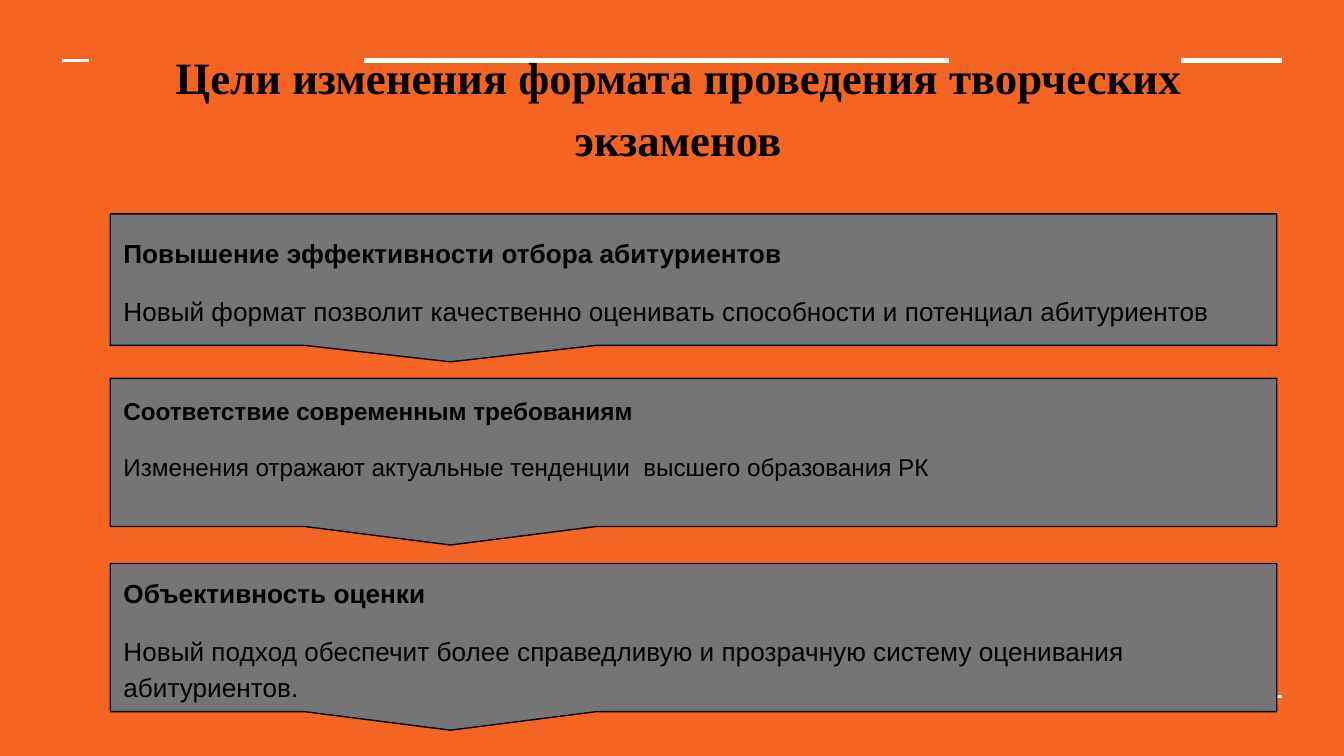
from lxml.etree import SubElement
from pptx import Presentation
from pptx.dml.color import RGBColor
from pptx.enum.shapes import MSO_CONNECTOR, MSO_SHAPE
from pptx.enum.text import MSO_ANCHOR, PP_ALIGN
from pptx.oxml.ns import qn
from pptx.util import Inches, Pt

ORANGE = RGBColor(0xF4, 0x65, 0x24)
WHITE = RGBColor(0xFF, 0xFF, 0xFF)
BLACK = RGBColor(0x00, 0x00, 0x00)
GREY = RGBColor(0x75, 0x75, 0x75)

SLIDE_WIDTH = Inches(10)
SLIDE_HEIGHT = SLIDE_WIDTH * 9 // 16
LEFT, CALLOUT_WIDTH = 8.2, 86.8
FIRST_TOP = 28.3
STEP = 1.25  # callout height plus the room for its tail
TAIL_TIP = (-5 / 24, 5 / 8)  # from the callout's centre, as shares of its size

# left, right, height on the slide (percent), width in points
RULES = [(27.1, 95.4, 8, 3), (27.1, 95.4, 92.1, 1.5), (4.65, 6.65, 8, 1.5)]

# heading, text, height (percent), font size, bottom inset in inches
GOALS = [
    ("Повышение эффективности отбора абитуриентов",
     "Новый формат позволит качественно оценивать способности и потенциал абитуриентов",
     17.4, 14, 0.1),
    ("Соответствие современным требованиям",
     "Изменения отражают актуальные тенденции  высшего образования РК",
     19.6, 13, 0.33),
    ("Объективность оценки",
     "Новый подход обеспечит более справедливую и прозрачную систему оценивания абитуриентов.",
     19.6, 14, 0.1),
]


def across(percent):
    return round(SLIDE_WIDTH * percent / 100)


def down(percent):
    return round(SLIDE_HEIGHT * percent / 100)


def set_frame(frame, anchor, bottom=0.1):
    frame.word_wrap = True
    frame.vertical_anchor = anchor
    frame.margin_left = frame.margin_right = frame.margin_top = Inches(0.1)
    frame.margin_bottom = Inches(bottom)


def set_paragraph(para, align, space_before):
    para.alignment = align
    para.line_spacing = 1.15
    para.space_before = Pt(space_before)


def add_span(para, text, font_name, size, bold):
    span = para.add_run()
    span.text = text
    span.font.name = font_name
    span.font.size = Pt(size)
    span.font.bold = bold
    span.font.color.rgb = BLACK
    return span


def highlight(span, color):
    """Put a text highlight right after the fill, where the schema wants it."""
    properties = span.font._element
    mark = SubElement(properties, qn("a:highlight"))
    SubElement(mark, qn("a:srgbClr")).set("val", str(color))
    properties.find(qn("a:solidFill")).addnext(mark)


def add_rule(slide, left, right, height, width):
    rule = slide.shapes.add_connector(
        MSO_CONNECTOR.STRAIGHT, across(left), down(height), across(right), down(height))
    rule.line.color.rgb = WHITE
    rule.line.width = Pt(width)
    SubElement(rule._element.spPr, qn("a:effectLst"))


def add_title(slide):
    box = slide.shapes.add_textbox(across(LEFT), down(3.7), across(84.5), down(24.7))
    set_frame(box.text_frame, MSO_ANCHOR.TOP)
    para = box.text_frame.paragraphs[0]
    set_paragraph(para, PP_ALIGN.CENTER, 24)
    add_span(para, "Цели изменения формата проведения ", "Times New Roman", 24, True)
    ending = add_span(para, "творческих экзаменов", "Times New Roman", 24, True)
    highlight(ending, ORANGE)


def add_goal(slide, top, heading, text, height, size, bottom):
    callout = slide.shapes.add_shape(
        MSO_SHAPE.RECTANGULAR_CALLOUT,
        across(LEFT), down(top), across(CALLOUT_WIDTH), down(height))
    callout.adjustments[0], callout.adjustments[1] = TAIL_TIP
    callout.shadow.inherit = False
    callout.fill.solid()
    callout.fill.fore_color.rgb = GREY
    callout.line.color.rgb = BLACK
    callout.line.width = Pt(0.75)

    frame = callout.text_frame
    set_frame(frame, MSO_ANCHOR.MIDDLE, bottom)
    for para, words, bold in ((frame.paragraphs[0], heading, True),
                              (frame.add_paragraph(), text, False)):
        set_paragraph(para, PP_ALIGN.LEFT, 12)
        add_span(para, words, "Arial", size, bold)


def main():
    deck = Presentation()
    deck.slide_width, deck.slide_height = SLIDE_WIDTH, SLIDE_HEIGHT
    slide = deck.slides.add_slide(deck.slide_layouts[6])
    slide.background.fill.solid()
    slide.background.fill.fore_color.rgb = ORANGE

    for rule in RULES:
        add_rule(slide, *rule)
    add_title(slide)
    top = FIRST_TOP
    for heading, text, height, size, bottom in GOALS:
        add_goal(slide, top, heading, text, height, size, bottom)
        top += height * STEP

    deck.save("out.pptx")


if __name__ == "__main__":
    main()
